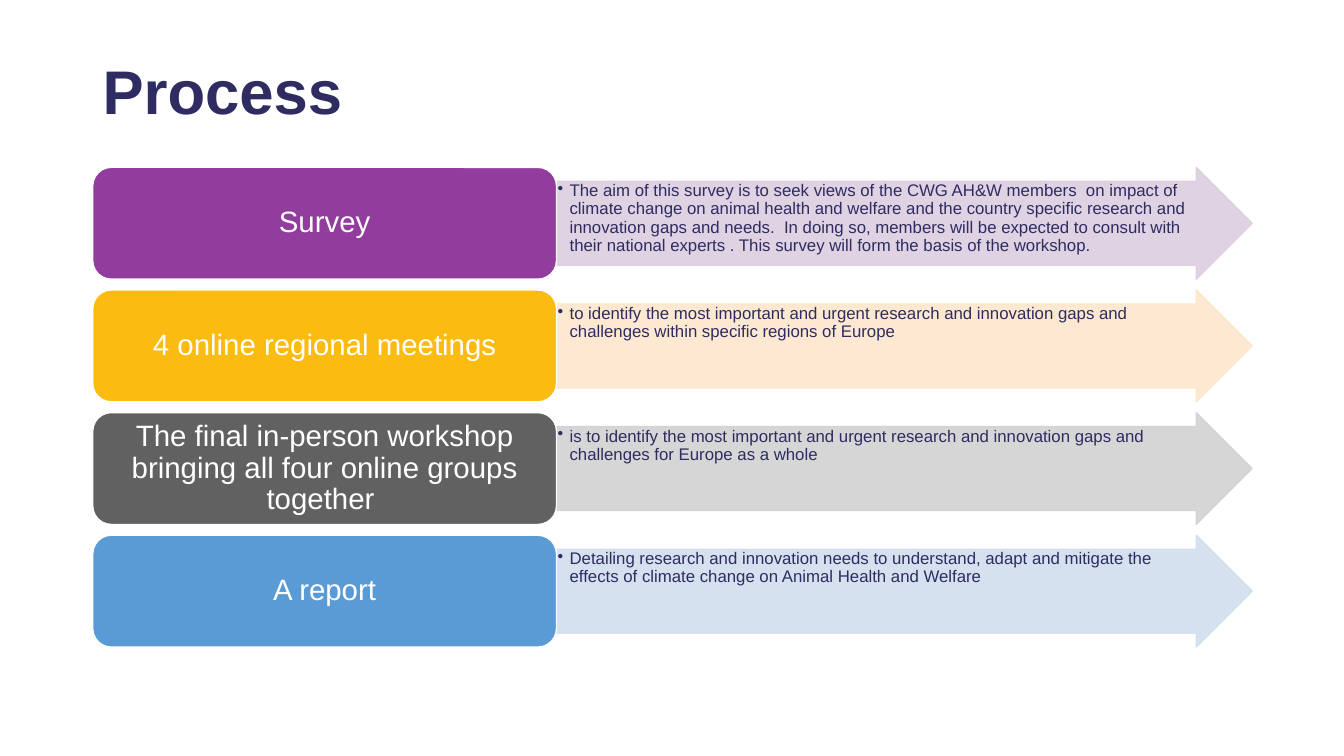
from dataclasses import dataclass

from lxml.etree import SubElement
from pptx import Presentation
from pptx.dml.color import RGBColor as Rgb
from pptx.enum.shapes import MSO_SHAPE as Kind
from pptx.enum.text import MSO_ANCHOR as Anchor, PP_ALIGN as Align
from pptx.oxml.ns import qn
from pptx.util import Inches, Pt


@dataclass(frozen=True)
class Theme:
    """Hold the colours and type sizes of the slide."""
    face: str = "Arial"
    ink: str = "2E2C61"
    white: str = "FFFFFF"
    head: int = 44
    label: int = 21
    body: int = 12
    alpha: int = 90


THEME = Theme()
STEPS = [
    ("Survey", "923C9D", "DCCEDF",
     "The aim of this survey is to seek views of the CWG AH&W members  on impact of "
     "climate change on animal health and welfare and the country specific research and "
     "innovation gaps and needs.  In doing so, members will be expected to consult with "
     "their national experts . This survey will form the basis of the workshop."),
    ("4 online regional meetings", "FBBB10", "FDE7CC",
     "to identify the most important and urgent research and innovation gaps and "
     "challenges within specific regions of Europe"),
    ("The final in-person workshop bringing all four online groups together ",
     "616161", "D2D2D2",
     "is to identify the most important and urgent research and innovation gaps and "
     "challenges for Europe as a whole"),
    ("A report", "5B9BD5", "D2DEEF",
     "Detailing research and innovation needs to understand, adapt and mitigate the "
     " effects of climate change on Animal Health and Welfare"),
]


def apply(obj, form):
    """Set each attribute of an object from a dict."""
    for key, val in form.items():
        setattr(obj, key, val)


def write(shape, text, size, color, bold=False, align=Align.LEFT,
          anchor=Anchor.MIDDLE, pad=(0.1, 0.05), bullet=False):
    """Write one paragraph into a shape."""
    side, edge = map(Inches, pad)
    frame = shape.text_frame
    apply(frame, dict(word_wrap=True, vertical_anchor=anchor, margin_left=side,
                      margin_right=side, margin_top=edge, margin_bottom=edge))
    par = frame.paragraphs[0]
    apply(par, dict(text=text, alignment=align, line_spacing=0.9))
    if bullet:
        par.level = 1
        props = par._p.get_or_add_pPr()
        props.set("marL", str(Inches(0.12)))
        props.set("indent", str(Inches(-0.12)))
        SubElement(props, qn("a:buChar")).set("char", "•")
    font = par.runs[0].font
    apply(font, dict(name=THEME.face, size=Pt(size), bold=bold))
    font.color.rgb = Rgb.from_string(color)


def draw(slide, kind, box, fill, line, alpha=100):
    """Add a filled and outlined preset shape."""
    shape = slide.shapes.add_shape(kind, *map(Inches, box))
    shape.shadow.inherit = False
    shape.line.width = Pt(1)
    shape.fill.solid()
    for part, color in ((shape.fill.fore_color, fill), (shape.line.color, line)):
        part.rgb = Rgb.from_string(color)
    if alpha < 100:
        for node in shape._element.spPr.iter(qn("a:srgbClr")):
            SubElement(node, qn("a:alpha")).set("val", str(alpha * 1000))
    return shape


def add_head(slide, box, text):
    """Place the slide title in its box."""
    write(slide.shapes.add_textbox(*map(Inches, box)), text,
          THEME.head, THEME.ink, bold=True)


def add_step(slide, box, step):
    """Place an arrow with its note and a label block in a row."""
    left, top, width, height = box
    label, dark, pale, note = step
    block = width * 0.4
    arrow = draw(slide, Kind.RIGHT_ARROW, (left + block, top, width - block, height),
                 pale, pale, THEME.alpha)
    arrow.adjustments[0] = 0.75
    write(arrow, note, THEME.body, THEME.ink, anchor=Anchor.TOP,
          pad=(0.01, 0.01), bullet=True)
    card = draw(slide, Kind.ROUNDED_RECTANGLE, (left, top, block, height),
                dark, THEME.white)
    write(card, label, THEME.label, THEME.white, align=Align.CENTER, pad=(0.09, 0.04))


def add_steps(slide, box, steps, height=1.11):
    """Spread the step rows evenly down a box."""
    left, top, width, full = box
    pitch = (full - height) / (len(steps) - 1)
    for row, step in enumerate(steps):
        add_step(slide, (left, top + row * pitch, width, height), step)


def main():
    """Build and save the slide."""
    deck = Presentation()
    apply(deck, dict(slide_width=Inches(13.33), slide_height=Inches(7.5)))
    slide = deck.slides.add_slide(deck.slide_layouts[6])
    add_head(slide, (0.92, 0.21, 11.5, 1.45), "Process")
    add_steps(slide, (0.92, 1.66, 11.5, 4.76), STEPS)
    deck.save("out.pptx")


if __name__ == "__main__":
    main()
